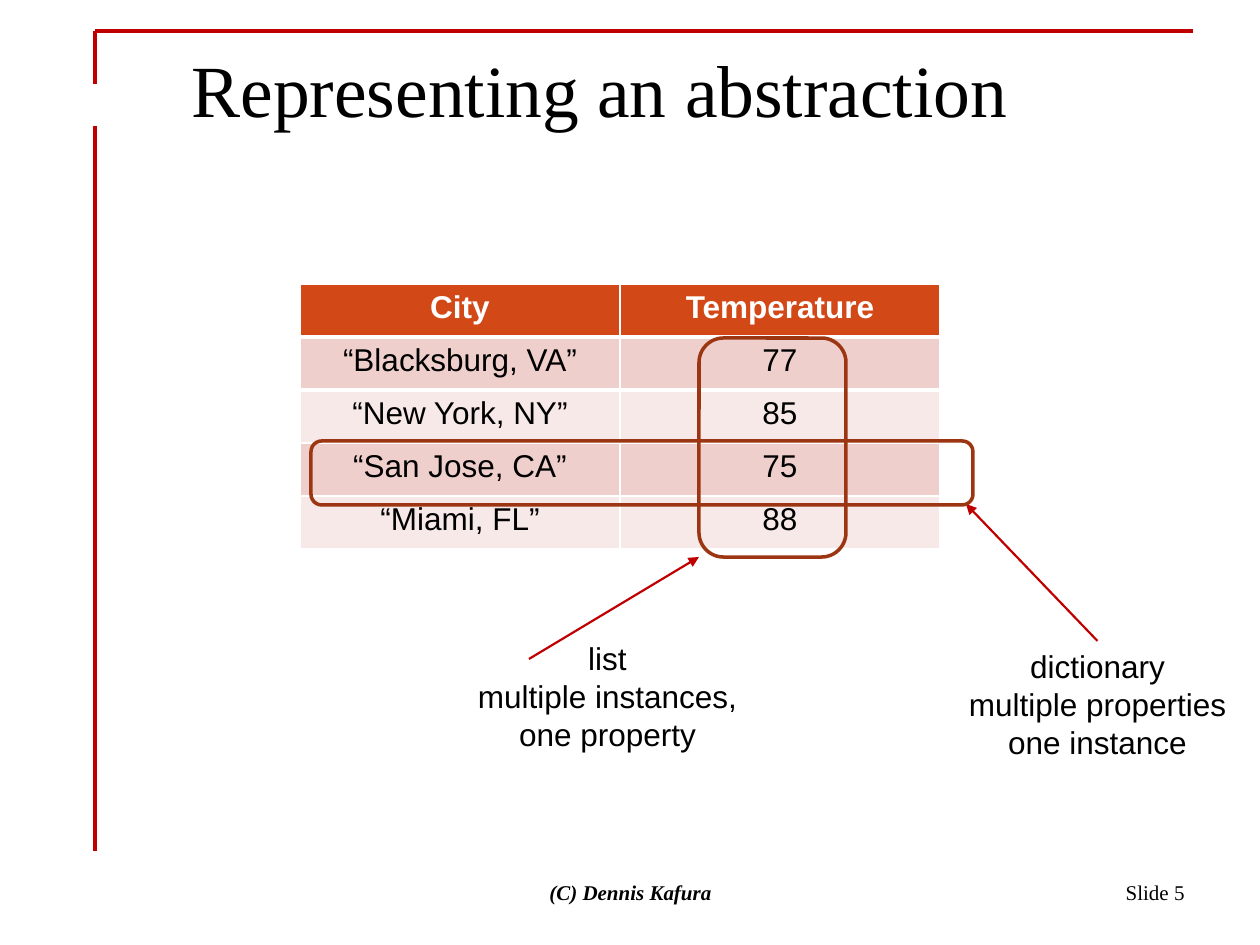
from lxml import etree
from pptx import Presentation, util as u
from pptx.dml.color import RGBColor
from pptx.enum import shapes, text
from pptx.oxml.ns import qn

SCALE = 914400 / 126
RED, RUST, BLACK, WHITE = "C00000", "9C3511", "000000", "FFFFFF"
SANS, SERIF = "Arial", "Times New Roman"
LEFT, MID, RIGHT = text.PP_ALIGN.LEFT, text.PP_ALIGN.CENTER, text.PP_ALIGN.RIGHT

TITLE = "Representing an abstraction"
ROWS = [("City", "Temperature"), ("“Blacksburg, VA”", "77"),
        ("“New York, NY”", "85"), ("“San Jose, CA”", "75"),
        ("“Miami, FL”", "88")]
HEAD, BANDS = "D34817", ("F7E9E8", "EFCFCC")
RULES = [((95, 31), (1193, 31), 2), ((95, 31), (95, 84), 1.75),
         ((95, 126), (95, 851), 1.75)]
RINGS = [(699, 338, 147, 219), (311, 441, 662, 64)]
DICT = ["dictionary", "multiple properties", "one instance"]
LIST = ["list", "multiple instances,", "one property"]


def px(n):
    return u.Emu(round(n * SCALE))


def rgb(code):
    return RGBColor.from_string(code)


def write(frame, lines, size=18, face=SANS, color=BLACK, bold=False,
          slant=False, align=LEFT):
    for i, line in enumerate(lines):
        para = frame.paragraphs[0] if i == 0 else frame.add_paragraph()
        para.alignment = align
        run = para.add_run()
        run.text = line
        font = run.font
        font.size, font.name = u.Pt(size), face
        font.bold, font.italic = bold, slant
        font.color.rgb = rgb(color)


def label(box, lines, wrap=False, **fmt):
    item = slide.shapes.add_textbox(*map(px, box))
    frame = item.text_frame
    frame.word_wrap = wrap
    if wrap:
        frame.vertical_anchor = text.MSO_ANCHOR.MIDDLE
    else:
        frame.auto_size = text.MSO_AUTO_SIZE.SHAPE_TO_FIT_TEXT
    write(frame, lines, **fmt)
    return item


def rule(start, end, width, arrow=False):
    line = slide.shapes.add_connector(
        shapes.MSO_CONNECTOR.STRAIGHT, *map(px, start + end))
    line.line.color.rgb = rgb(RED)
    line.line.width = u.Pt(width)
    if arrow:
        tail = etree.SubElement(line.line._get_or_add_ln(), qn("a:tailEnd"))
        tail.set("type", "triangle")
    etree.SubElement(line._element.spPr, qn("a:effectLst"))
    return line


def ring(box):
    item = slide.shapes.add_shape(
        shapes.MSO_SHAPE.ROUNDED_RECTANGLE, *map(px, box))
    item.shadow.inherit = False
    item.fill.background()
    item.line.color.rgb = rgb(RUST)
    item.line.width = u.Pt(2)


def edge(cell, side, width):
    line = etree.Element(qn("a:" + side), w=str(u.Pt(width)))
    fill = etree.SubElement(line, qn("a:solidFill"))
    etree.SubElement(fill, qn("a:srgbClr"), val=WHITE)
    cell._tc.get_or_add_tcPr().insert(0, line)


deck = Presentation()
deck.slide_width, deck.slide_height = px(1260), px(945)
slide = deck.slides.add_slide(deck.slide_layouts[5])

for start, end, width in RULES:
    rule(start, end, width)

title = slide.shapes.title
title.left, title.top, title.width, title.height = map(px, (179, 38, 1018, 98))
title.text_frame.vertical_anchor = text.MSO_ANCHOR.TOP
write(title.text_frame, [TITLE], size=42, face=SERIF)

label((903, 861, 294, 63), ["Slide 5"], wrap=True, size=12, face=SERIF,
      align=RIGHT)
label((431, 861, 399, 63), ["(C) Dennis Kafura"], wrap=True, size=12,
      face=SERIF, bold=True, slant=True, align=MID)

grid = slide.shapes.add_table(
    len(ROWS), 2, *map(px, (300, 284, 640, 53 * len(ROWS)))).table
for r, row in enumerate(ROWS):
    for c, words in enumerate(row):
        cell = grid.cell(r, c)
        cell.fill.solid()
        cell.fill.fore_color.rgb = rgb(BANDS[r % 2] if r else HEAD)
        if r < 2:
            edge(cell, "lnT" if r else "lnB", 3)
        write(cell.text_frame, [words], color=BLACK if r else WHITE,
              bold=r == 0, align=MID)

note = label((955, 641, 285, 127), DICT, align=MID)
rule((1098, 641), (966, 504), 1.25, arrow=True).begin_connect(note, 0)
label((464, 633, 287, 127), LIST, align=MID)
for box in RINGS:
    ring(box)
rule((529, 659), (699, 557), 1.25, arrow=True)

deck.save("out.pptx")
